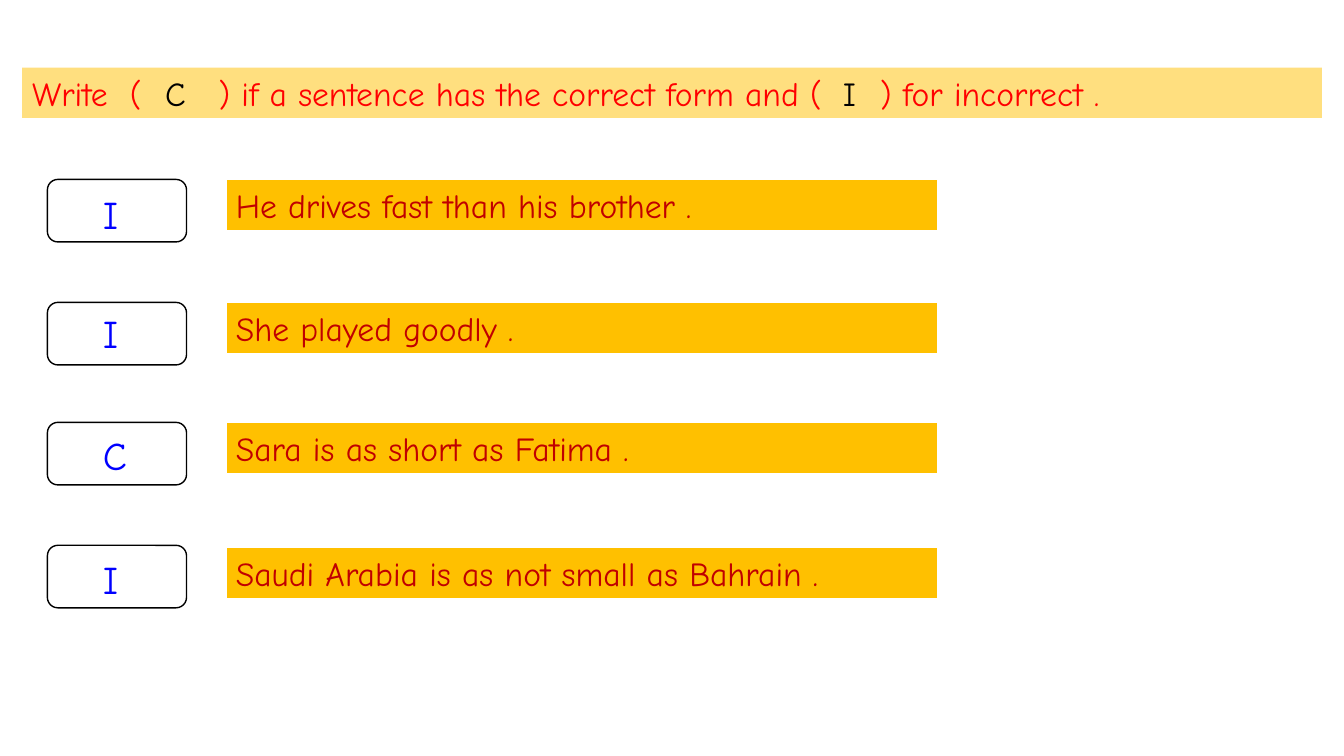
"""Build a grammar exercise slide with marked sentences."""
from lxml.etree import SubElement as Sub
from pptx import Presentation
from pptx.dml.color import RGBColor
from pptx.enum.shapes import MSO_SHAPE as Kind
from pptx.enum.text import MSO_ANCHOR as Anchor, MSO_AUTO_SIZE as Fit, PP_ALIGN as Align
from pptx.oxml.ns import qn
from pptx.util import Inches, Pt

BLACK = RGBColor(0x00, 0x00, 0x00)
WHITE = RGBColor(0xFF, 0xFF, 0xFF)
RED = RGBColor(0xFF, 0x00, 0x00)
DARK = RGBColor(0xC0, 0x00, 0x00)
BLUE = RGBColor(0x00, 0x00, 0xFF)
GOLD = RGBColor(0xFF, 0xC0, 0x00)
FONT = "Comic Neue"
TITLE = [
    ("Write\t(\t", RED),
    ("C", BLACK),
    ("\t) if a sentence has the correct form and (\t", RED),
    ("I", BLACK),
    ("\t) for incorrect .", RED),
]
STOPS = [0.97, 1.32, 1.85, 8.04, 8.41]
ROWS = [
    (1.78, 1.78, 1.84, "I", "He drives fast than his brother ."),
    (3, 3, 3.02, "I", "She played goodly ."),
    (4.19, 4.19, 4.23, "C", "Sara is as short as Fatima ."),
    (5.41, 5.43, 5.46, "I", "Saudi Arabia is as not small as Bahrain ."),
]


def add_run(para, text, size, color):
    """Append one styled run to a paragraph."""
    run = para.add_run()
    run.text = text
    run.font.name = FONT
    run.font.size = Pt(size)
    run.font.color.rgb = color


def add_box(slide, kind, box, fill=None, line=None, width=1):
    """Add a preset shape with the given fill and outline."""
    shape = slide.shapes.add_shape(kind, *map(Inches, box))
    shape.shadow.inherit = False
    if fill is None:
        shape.fill.background()
    else:
        shape.fill.solid()
        shape.fill.fore_color.rgb = fill
    if line is None:
        shape.line.fill.background()
    else:
        shape.line.color.rgb = line
        shape.line.width = Pt(width)
    return shape


def set_frame(shape, anchor):
    """Prepare left-aligned text and return its paragraph."""
    frame = shape.text_frame
    frame.word_wrap = True
    frame.vertical_anchor = anchor
    para = frame.paragraphs[0]
    para.alignment = Align.LEFT
    return para


def add_title(slide):
    """Add the instruction on a half-clear band with tab stops."""
    band = add_box(slide, Kind.RECTANGLE, (0.22, 0.67, 12.89, 0.5), GOLD)
    tint = band.fill._xPr.find(qn("a:solidFill"))[0]
    Sub(tint, qn("a:alpha"), val="50000")
    para = set_frame(band, Anchor.TOP)
    band.text_frame.auto_size = Fit.SHAPE_TO_FIT_TEXT
    tabs = Sub(para._p.get_or_add_pPr(), qn("a:tabLst"))
    for stop in STOPS:
        Sub(tabs, qn("a:tab"), pos=str(Inches(stop)), algn="l")
    for text, color in TITLE:
        add_run(para, text, 24, color)


def add_answer(slide, top, mark):
    """Add the letter that marks a sentence."""
    label = slide.shapes.add_textbox(*map(Inches, (0.75, top, 0.83, 0.57)))
    para = set_frame(label, Anchor.TOP)
    label.text_frame.margin_left = Inches(0.27)
    label.text_frame.auto_size = Fit.SHAPE_TO_FIT_TEXT
    add_run(para, mark, 28, BLUE)


def add_row(slide, frame_top, bar_top, mark_top, mark, text):
    """Add an answer frame, a sentence bar and the answer."""
    add_box(slide, Kind.ROUNDED_RECTANGLE, (0.47, frame_top, 1.38, 0.62), line=BLACK)
    bar = add_box(slide, Kind.RECTANGLE, (2.24, bar_top, 7.06, 0.51), GOLD, WHITE, 1.5)
    add_run(set_frame(bar, Anchor.MIDDLE), text, 24, DARK)
    add_answer(slide, mark_top, mark)


def main():
    """Build and save the slide."""
    deck = Presentation()
    deck.slide_width = Inches(13.33)
    deck.slide_height = Inches(7.5)
    slide = deck.slides.add_slide(deck.slide_layouts[6])
    add_title(slide)
    for row in ROWS:
        add_row(slide, *row)
    deck.save("out.pptx")


if __name__ == "__main__":
    main()
